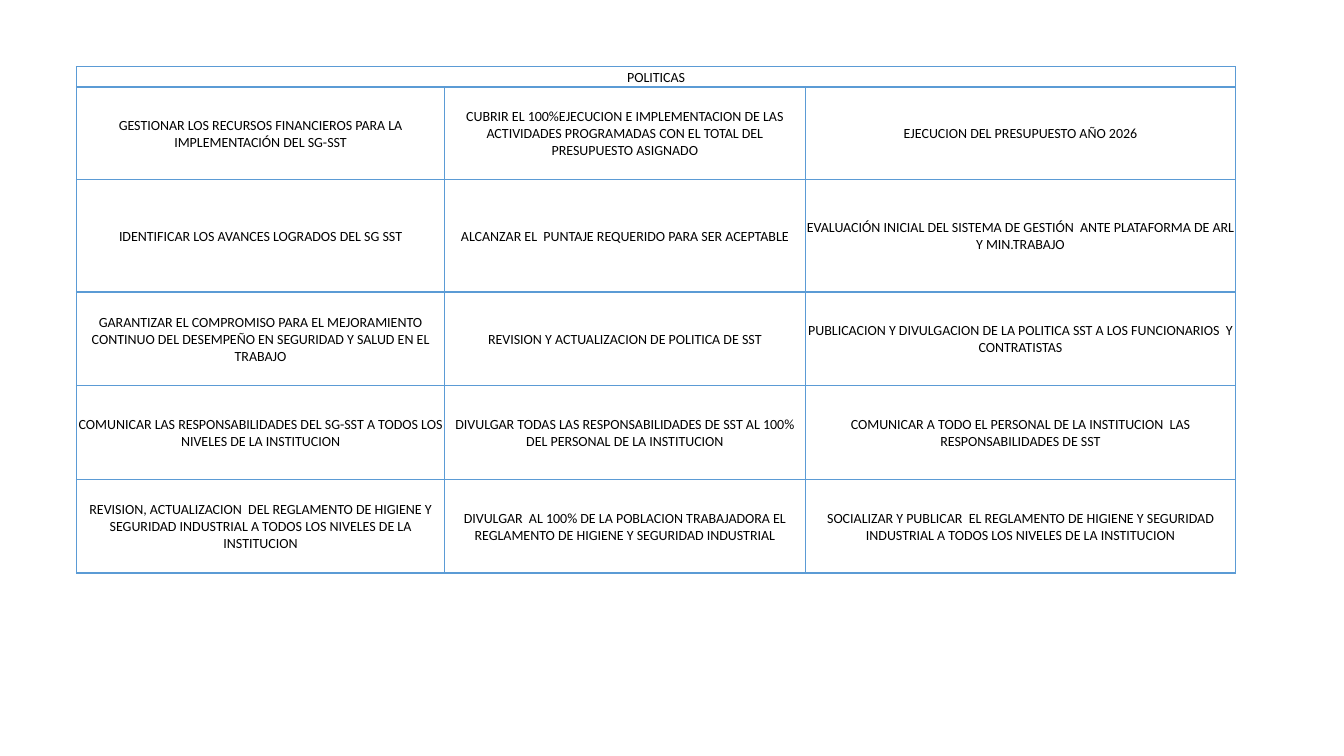
from dataclasses import dataclass

from lxml import etree
from pptx import Presentation
from pptx.dml.color import RGBColor
from pptx.enum.text import MSO_ANCHOR, PP_ALIGN
from pptx.oxml.ns import qn
from pptx.table import Table, _Cell
from pptx.util import Cm, Pt

MIDDLE = MSO_ANCHOR.MIDDLE
CENTER = PP_ALIGN.CENTER
BLANK_LAYOUT = 6

COLORS = {"text": "000000", "border": "5B9BD5"}
FONT_FORMAT = {"name": "Calibri", "size": Pt(10), "bold": False}
CELL_FORMAT = {
    "margin_left": Cm(0.03),
    "margin_right": Cm(0.03),
    "margin_top": Cm(0.03),
    "margin_bottom": Cm(0),
    "vertical_anchor": MIDDLE,
}
BORDER_SIDES = ("lnL", "lnR", "lnT", "lnB")
BORDER_WIDTH = Pt(1)
COLUMN_WIDTHS = (9.27, 9.09, 10.85)
HEADER = "POLITICAS"
HEADER_HEIGHT = 0.51


@dataclass(frozen=True)
class Policy:
    height: float
    objective: str
    goal: str
    activity: str


POLICIES = (
    Policy(
        2.34,
        "GESTIONAR LOS RECURSOS FINANCIEROS PARA LA IMPLEMENTACIÓN DEL SG-SST",
        "CUBRIR EL 100%EJECUCION E IMPLEMENTACION DE LAS ACTIVIDADES "
        "PROGRAMADAS CON EL TOTAL DEL PRESUPUESTO ASIGNADO",
        "EJECUCION DEL PRESUPUESTO AÑO 2026",
    ),
    Policy(
        2.83,
        "IDENTIFICAR LOS AVANCES LOGRADOS DEL SG SST",
        "ALCANZAR EL  PUNTAJE REQUERIDO PARA SER ACEPTABLE",
        "EVALUACIÓN INICIAL DEL SISTEMA DE GESTIÓN  ANTE PLATAFORMA DE ARL "
        "Y MIN.TRABAJO",
    ),
    Policy(
        2.36,
        "GARANTIZAR EL COMPROMISO PARA EL MEJORAMIENTO CONTINUO DEL DESEMPEÑO "
        "EN SEGURIDAD Y SALUD EN EL TRABAJO",
        "REVISION Y ACTUALIZACION DE POLITICA DE SST",
        "PUBLICACION Y DIVULGACION DE LA POLITICA SST A LOS FUNCIONARIOS  "
        "Y CONTRATISTAS",
    ),
    Policy(
        2.36,
        "COMUNICAR LAS RESPONSABILIDADES DEL SG-SST A TODOS LOS NIVELES "
        "DE LA INSTITUCION",
        "DIVULGAR TODAS LAS RESPONSABILIDADES DE SST AL 100% DEL PERSONAL "
        "DE LA INSTITUCION",
        "COMUNICAR A TODO EL PERSONAL DE LA INSTITUCION  LAS "
        "RESPONSABILIDADES DE SST",
    ),
    Policy(
        2.36,
        "REVISION, ACTUALIZACION  DEL REGLAMENTO DE HIGIENE Y SEGURIDAD "
        "INDUSTRIAL A TODOS LOS NIVELES DE LA INSTITUCION",
        "DIVULGAR  AL 100% DE LA POBLACION TRABAJADORA EL REGLAMENTO DE "
        "HIGIENE Y SEGURIDAD INDUSTRIAL",
        "SOCIALIZAR Y PUBLICAR  EL REGLAMENTO DE HIGIENE Y SEGURIDAD "
        "INDUSTRIAL A TODOS LOS NIVELES DE LA INSTITUCION",
    ),
)


def format_cell(cell: _Cell) -> None:
    for name, value in CELL_FORMAT.items():
        setattr(cell, name, value)
    properties = cell._tc.get_or_add_tcPr()
    for side in BORDER_SIDES:
        line = etree.SubElement(properties, qn(f"a:{side}"), w=str(BORDER_WIDTH))
        fill = etree.SubElement(line, qn("a:solidFill"))
        etree.SubElement(fill, qn("a:srgbClr"), val=COLORS["border"])
    cell.fill.background()


def write_cell(cell: _Cell, text: str) -> None:
    para = cell.text_frame.paragraphs[0]
    para.alignment = CENTER
    span = para.add_run()
    span.text = text
    for name, value in FONT_FORMAT.items():
        setattr(span.font, name, value)
    span.font.color.rgb = RGBColor.from_string(COLORS["text"])


def fill_table(table: Table) -> None:
    heights = (HEADER_HEIGHT, *(policy.height for policy in POLICIES))
    for column, width in zip(table.columns, COLUMN_WIDTHS):
        column.width = Cm(width)
    for row, height in zip(table.rows, heights):
        row.height = Cm(height)
    for cell in table.iter_cells():
        format_cell(cell)
    table.cell(0, 0).merge(table.cell(0, len(COLUMN_WIDTHS) - 1))
    write_cell(table.cell(0, 0), HEADER)
    for row_index, policy in enumerate(POLICIES, start=1):
        texts = (policy.objective, policy.goal, policy.activity)
        for column_index, text in enumerate(texts):
            write_cell(table.cell(row_index, column_index), text)


def main() -> None:
    deck = Presentation()
    deck.slide_width, deck.slide_height = Cm(33.87), Cm(19.05)
    page = deck.slides.add_slide(deck.slide_layouts[BLANK_LAYOUT])
    total_height = HEADER_HEIGHT + sum(policy.height for policy in POLICIES)
    frame = page.shapes.add_table(
        len(POLICIES) + 1,
        len(COLUMN_WIDTHS),
        Cm(1.93),
        Cm(1.68),
        Cm(sum(COLUMN_WIDTHS)),
        Cm(total_height),
    )
    table = frame.table
    table.first_row = False
    table.horz_banding = False
    fill_table(table)
    deck.save("out.pptx")


if __name__ == "__main__":
    main()
